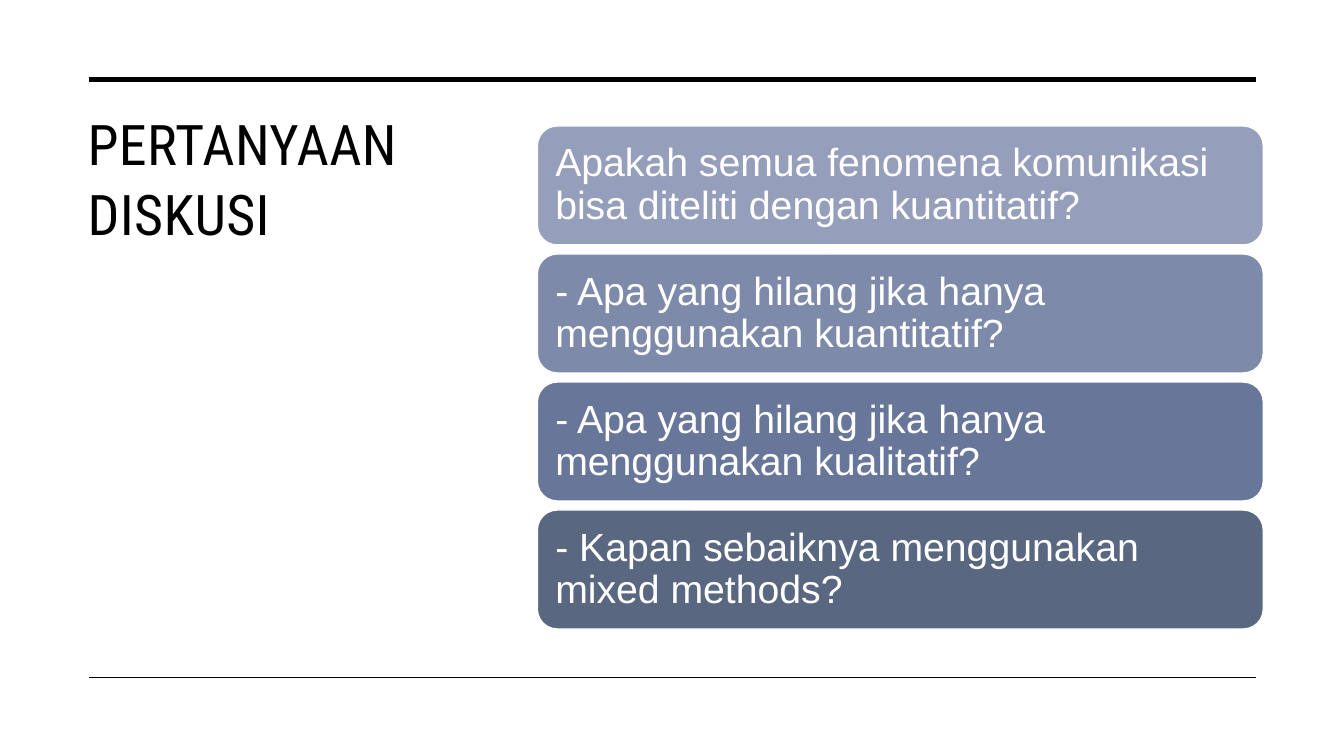
from dataclasses import dataclass

from pptx import Presentation
from pptx.dml.color import RGBColor
from pptx.enum.shapes import MSO_CONNECTOR, MSO_SHAPE
from pptx.enum.text import MSO_ANCHOR, PP_ALIGN
from pptx.oxml.ns import qn
from pptx.slide import Slide
from pptx.text.text import TextFrame
from pptx.util import Inches, Pt
from lxml.etree import SubElement


@dataclass(frozen=True)
class Theme:
    ink: str = "000000"
    paper: str = "FFFFFF"
    title_font: str = "Roboto Condensed"
    body_font: str = "Arial"
    title_size: int = 40
    body_size: int = 28
    tracking: int = 30


@dataclass(frozen=True)
class Rule:
    top: float
    weight: float


@dataclass(frozen=True)
class Question:
    wording: str
    fill: str


THEME = Theme()
RULE_LEFT, RULE_RIGHT = 0.88, 12.46
CARD_LEFT, CARD_TOP, CARD_WIDTH, CARD_HEIGHT = 5.33, 1.25, 7.2, 1.18
CARD_PITCH = 1.27
CARD_INSET = 0.12

RULES = [Rule(0.79, 3.5), Rule(6.72, 1)]
QUESTIONS = [
    Question("Apakah semua fenomena komunikasi bisa diteliti dengan kuantitatif?", "959EBB"),
    Question("- Apa yang hilang jika hanya menggunakan kuantitatif?", "7E8AAA"),
    Question("- Apa yang hilang jika hanya menggunakan kualitatif?", "687799"),
    Question("- Kapan sebaiknya menggunakan mixed methods?", "596781"),
]


def write(frame: TextFrame, wording: str, font: str, size: int, color: str, spacing: float) -> None:
    frame.word_wrap = True
    paragraph = frame.paragraphs[0]
    paragraph.text = wording
    paragraph.alignment = PP_ALIGN.LEFT
    paragraph.line_spacing = spacing
    paragraph.font.name = font
    paragraph.font.size = Pt(size)
    paragraph.font.color.rgb = RGBColor.from_string(color)


def draw_title(slide: Slide, wording: str) -> None:
    title = slide.shapes.add_textbox(Inches(0.77), Inches(1), Inches(4), Inches(4.82))
    frame = title.text_frame
    write(frame, wording, THEME.title_font, THEME.title_size, THEME.ink, 1.05)
    for run in frame.paragraphs[0].runs:
        run.font._element.set("spc", str(THEME.tracking))


def draw_rule(slide: Slide, rule: Rule) -> None:
    line = slide.shapes.add_connector(
        MSO_CONNECTOR.STRAIGHT,
        Inches(RULE_LEFT), Inches(rule.top), Inches(RULE_RIGHT), Inches(rule.top),
    )
    line.line.color.rgb = RGBColor.from_string(THEME.ink)
    line.line.width = Pt(rule.weight)
    SubElement(line._element.spPr, qn("a:effectLst"))


def draw_question(slide: Slide, question: Question, top: float) -> None:
    card = slide.shapes.add_shape(
        MSO_SHAPE.ROUNDED_RECTANGLE,
        Inches(CARD_LEFT), Inches(top), Inches(CARD_WIDTH), Inches(CARD_HEIGHT),
    )
    card.shadow.inherit = False
    card.fill.solid()
    card.fill.fore_color.rgb = RGBColor.from_string(question.fill)
    card.line.color.rgb = RGBColor.from_string(THEME.paper)
    card.line.width = Pt(1)
    frame = card.text_frame
    frame.vertical_anchor = MSO_ANCHOR.MIDDLE
    frame.margin_left = frame.margin_right = Inches(CARD_INSET)
    frame.margin_top = frame.margin_bottom = Inches(CARD_INSET)
    write(frame, question.wording, THEME.body_font, THEME.body_size, THEME.paper, 0.9)


def main() -> None:
    deck = Presentation()
    deck.slide_width = Inches(13.33)
    deck.slide_height = Inches(7.5)
    slide = deck.slides.add_slide(deck.slide_layouts[6])
    draw_title(slide, "PERTANYAAN DISKUSI")
    for rule in RULES:
        draw_rule(slide, rule)
    for index, question in enumerate(QUESTIONS):
        draw_question(slide, question, CARD_TOP + index * CARD_PITCH)
    deck.save("out.pptx")


if __name__ == "__main__":
    main()
